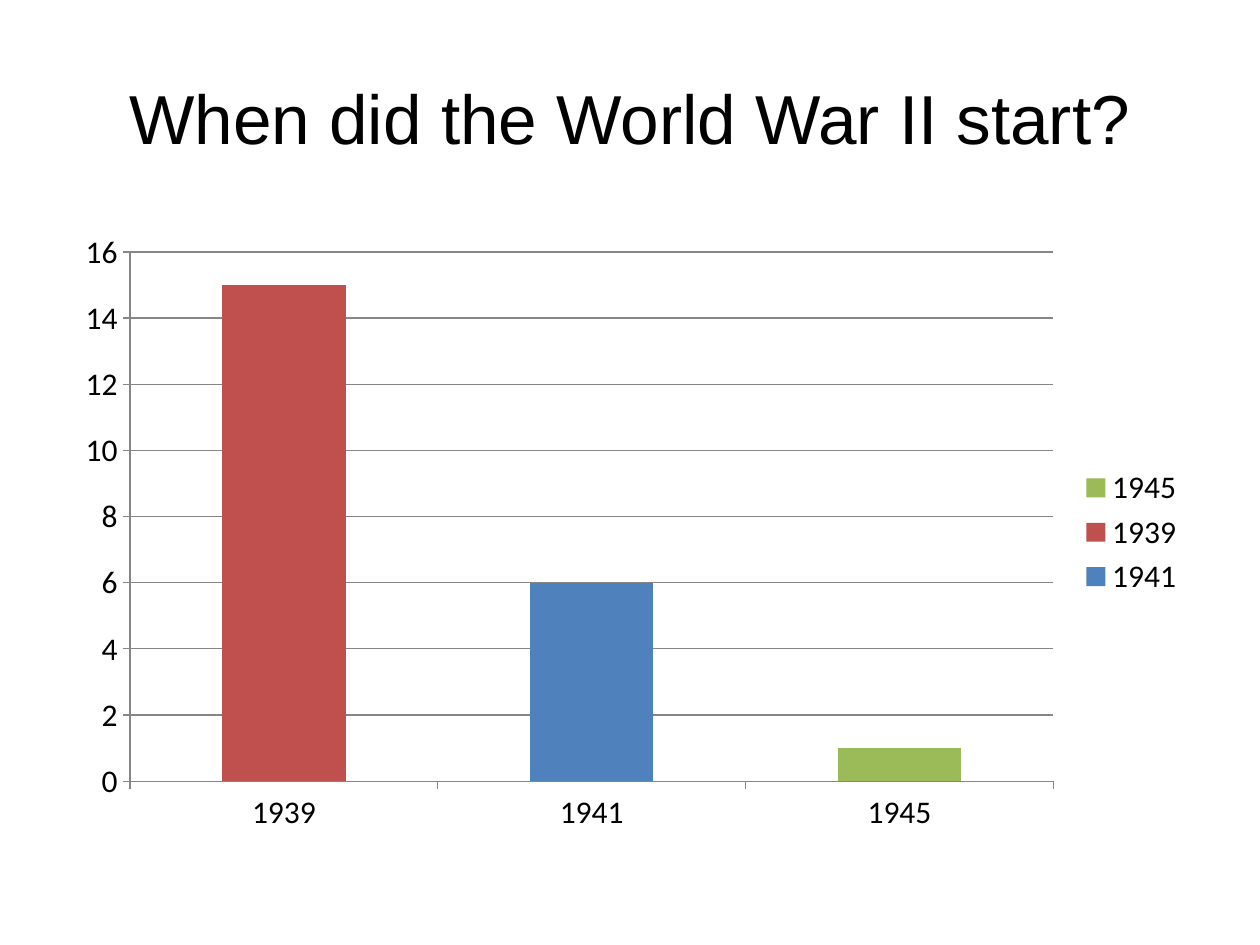
"""Build a slide with a stacked column chart of answers to a history question."""
from dataclasses import dataclass

from pptx import Presentation
from pptx.chart.data import CategoryChartData
from pptx.dml.color import RGBColor
from pptx.enum.chart import XL_CHART_TYPE, XL_LEGEND_POSITION, XL_TICK_MARK
from pptx.enum.text import MSO_ANCHOR, PP_ALIGN
from pptx.util import Inches, Pt

TITLE = "When did the World War II start?"
YEARS = ["1939", "1941", "1945"]
ANSWERS = [("1941", 6, "4F81BD"), ("1939", 15, "C0504D"), ("1945", 1, "9BBB59")]
TITLE_BOX = (0.5, 0.3, 9, 1.25)
CHART_BOX = (0.5, 1.75, 9, 4.95)


@dataclass(frozen=True)
class Theme:
    title_font: str = "Arial"
    title_size: float = 39.6
    chart_font: str = "Calibri"
    chart_size: float = 18
    text: str = "000000"
    axis: str = "868686"


THEME = Theme()


def set_font(font, name, size):
    font.name, font.size = name, Pt(size)
    font.color.rgb = RGBColor.from_string(THEME.text)


def set_line(line):
    line.color.rgb = RGBColor.from_string(THEME.axis)
    line.width = Pt(0.75)


def add_title(slide):
    sp = slide.shapes.title
    sp.left, sp.top, sp.width, sp.height = map(Inches, TITLE_BOX)
    tf = sp.text_frame
    tf.text = TITLE
    tf.vertical_anchor = MSO_ANCHOR.MIDDLE
    p = tf.paragraphs[0]
    p.alignment = PP_ALIGN.CENTER
    set_font(p.font, THEME.title_font, THEME.title_size)


def add_answer_chart(slide):
    data = CategoryChartData()
    data.categories = YEARS
    for name, count, _ in ANSWERS:
        data.add_series(name, [count if year == name else None for year in YEARS])
    chart = slide.shapes.add_chart(
        XL_CHART_TYPE.COLUMN_STACKED, *map(Inches, CHART_BOX), data).chart
    set_font(chart.font, THEME.chart_font, THEME.chart_size)
    chart.has_title = False
    chart.has_legend = True
    chart.legend.position = XL_LEGEND_POSITION.RIGHT
    chart.legend.include_in_layout = False

    plot = chart.plots[0]
    plot.gap_width, plot.overlap, plot.vary_by_categories = 150, 100, False
    for series, (_, _, color) in zip(plot.series, ANSWERS):
        series.format.fill.solid()
        series.format.fill.fore_color.rgb = RGBColor.from_string(color)

    for axis in (chart.category_axis, chart.value_axis):
        axis.major_tick_mark = XL_TICK_MARK.OUTSIDE
        axis.minor_tick_mark = XL_TICK_MARK.NONE
        set_line(axis.format.line)
    chart.value_axis.has_major_gridlines = True
    set_line(chart.value_axis.major_gridlines.format.line)


def main():
    prs = Presentation()
    prs.slide_width, prs.slide_height = Inches(10), Inches(7.5)
    slide = prs.slides.add_slide(prs.slide_layouts[5])
    add_title(slide)
    add_answer_chart(slide)
    prs.save("out.pptx")


if __name__ == "__main__":
    main()
